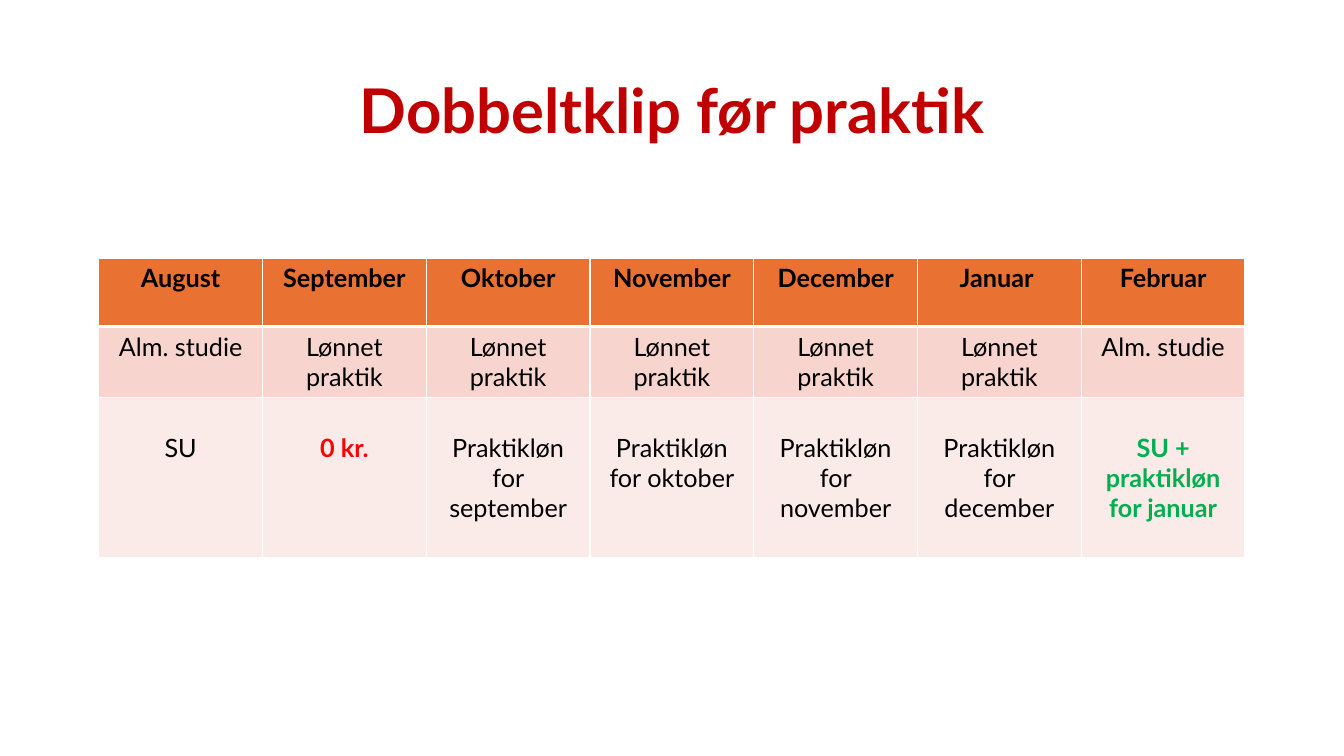
from dataclasses import dataclass

from lxml import etree
from pptx import Presentation
from pptx.dml.color import RGBColor
from pptx.enum.text import MSO_ANCHOR, PP_ALIGN
from pptx.oxml.ns import qn
from pptx.util import Inches, Pt

CENTER = PP_ALIGN.CENTER
MIDDLE = MSO_ANCHOR.MIDDLE
BLANK_LAYOUT = 6


@dataclass(frozen=True)
class Theme:
    font: str = "Lato"
    title_size: int = 44
    table_size: int = 18
    title: str = "C00000"
    text: str = "000000"
    unpaid: str = "FF0000"
    double_paid: str = "00B050"
    border: str = "FFFFFF"
    row_fills: tuple = ("E97132", "F7D5CE", "FBEBE8")


THEME = Theme()

MONTHS = ["August", "September", "Oktober", "November", "December", "Januar ", "Februar"]
ACTIVITIES = ["Alm. studie"] + ["Lønnet praktik"] * 5 + ["Alm. studie"]
SALARY_MONTHS = ["september", "oktober", "november", "december"]
INCOMES = (["SU", "0 kr."]
           + [f"Praktikløn for {month}" for month in SALARY_MONTHS]
           + ["SU + praktikløn for januar"])
INCOME_COLORS = {"0 kr.": THEME.unpaid, INCOMES[-1]: THEME.double_paid}

ROW_HEIGHTS = (0.68, 0.7, 1.59)
ROW_TOP_MARGINS = (0.05, 0.05, 0.35)
THIN, THICK = 1, 3


def write(frame, text, size, color, bold):
    paragraph = frame.paragraphs[0]
    paragraph.alignment = CENTER
    run = paragraph.add_run()
    run.text = text
    run.font.name = THEME.font
    run.font.size = Pt(size)
    run.font.bold = bold
    run.font.color.rgb = RGBColor.from_string(color)
    return paragraph


def set_borders(cell, top, bottom):
    """Draw all four cell edges, with top and bottom widths in points."""
    properties = cell._tc.get_or_add_tcPr()
    edges = {"a:lnL": THIN, "a:lnR": THIN, "a:lnT": top, "a:lnB": bottom}
    for position, (tag, width) in enumerate(edges.items()):
        line = etree.Element(qn(tag), w=str(Pt(width)))
        fill = etree.SubElement(line, qn("a:solidFill"))
        etree.SubElement(fill, qn("a:srgbClr"), val=THEME.border)
        properties.insert(position, line)


def add_title(slide, left, top, width, height):
    box = slide.shapes.add_textbox(Inches(left), Inches(top), Inches(width), Inches(height))
    frame = box.text_frame
    frame.word_wrap = True
    frame.vertical_anchor = MIDDLE
    heading = write(frame, "Dobbeltklip før praktik", THEME.title_size, THEME.title, True)
    heading.line_spacing = 0.9


def add_month_table(slide, left, top, width):
    rows = (MONTHS, ACTIVITIES, INCOMES)
    table = slide.shapes.add_table(
        len(rows), len(MONTHS), Inches(left), Inches(top),
        Inches(width), Inches(sum(ROW_HEIGHTS))).table
    for column in table.columns:
        column.width = Inches(width / len(MONTHS))
    for row_index, texts in enumerate(rows):
        table.rows[row_index].height = Inches(ROW_HEIGHTS[row_index])
        for column_index, text in enumerate(texts):
            cell = table.cell(row_index, column_index)
            cell.margin_top = Inches(ROW_TOP_MARGINS[row_index])
            cell.fill.solid()
            cell.fill.fore_color.rgb = RGBColor.from_string(THEME.row_fills[row_index])
            set_borders(cell, top=THICK if row_index == 1 else THIN,
                        bottom=THICK if row_index == 0 else THIN)
            write(cell.text_frame, text, THEME.table_size,
                  INCOME_COLORS.get(text, THEME.text),
                  row_index == 0 or text in INCOME_COLORS)


def main():
    presentation = Presentation()
    presentation.slide_width = Inches(13.33)
    presentation.slide_height = Inches(7.5)
    slide = presentation.slides.add_slide(presentation.slide_layouts[BLANK_LAYOUT])
    add_title(slide, 0.92, 0.4, 11.5, 1.45)
    add_month_table(slide, 0.98, 2.56, 11.37)
    presentation.save("out.pptx")


if __name__ == "__main__":
    main()
